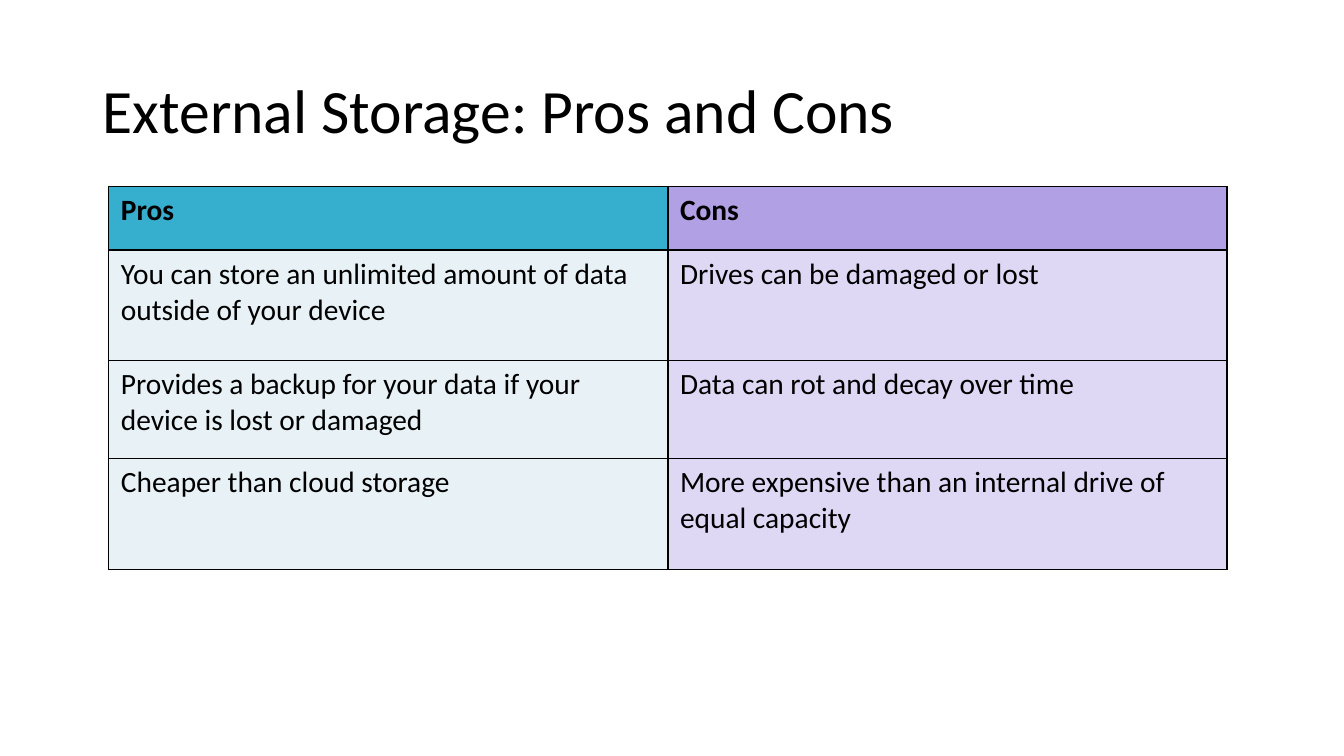
from lxml import etree
from pptx import Presentation
from pptx import util as u
from pptx.dml.color import RGBColor
from pptx.enum import text
from pptx.oxml.ns import qn

W, H = 13.33, 7.5
FONT = "Calibri"
COLORS = {
    "ink": "000000",
    "pros_head": "36AFCE", "pros_body": "E8F2F6",
    "cons_head": "B2A0E4", "cons_body": "DFD8F4",
}
TITLE_BOX = (0.92, 0.4, 11.5, 1.45)
TABLE_BOX = (1.08, 1.85, 11.09, 3.8)
ROW_HEIGHTS = (0.63, 1.1, 0.97, 1.1)
COLUMNS = {
    "pros": ("Pros",
             "You can store an unlimited amount of data outside of your device",
             "Provides a backup for your data if your device is lost or damaged",
             "Cheaper than cloud storage"),
    "cons": ("Cons",
             "Drives can be damaged or lost",
             "Data can rot and decay over time",
             "More expensive than an internal drive of equal capacity"),
}


def write(tf, content, size, bold=False, spacing=None):
    p = tf.paragraphs[0]
    p.line_spacing = spacing
    r = p.add_run()
    r.text = content
    r.font.name, r.font.size, r.font.bold = FONT, u.Pt(size), bold
    r.font.color.rgb = RGBColor.from_string(COLORS["ink"])


def add_borders(cell, width=1):
    """Draw a solid line on all four sides; lines must precede the cell fill."""
    tc_pr = cell._tc.get_or_add_tcPr()
    for i, side in enumerate("LRTB"):
        ln = etree.Element(qn(f"a:ln{side}"), w=str(u.Pt(width)))
        fill = etree.SubElement(ln, qn("a:solidFill"))
        etree.SubElement(fill, qn("a:srgbClr"), val=COLORS["ink"])
        tc_pr.insert(i, ln)


def add_title(s, box, content):
    tf = s.shapes.add_textbox(*map(u.Inches, box)).text_frame
    tf.word_wrap = True
    tf.vertical_anchor = text.MSO_ANCHOR.MIDDLE
    write(tf, content, 44, spacing=0.9)


def add_comparison(s, box, columns, row_heights):
    frame = s.shapes.add_table(len(row_heights), len(columns), *map(u.Inches, box))
    table = frame.table
    table.horz_banding = False
    for row, height in zip(table.rows, row_heights):
        row.height = u.Inches(height)
    for c, (name, entries) in enumerate(columns.items()):
        table.columns[c].width = u.Inches(box[2] / len(columns))
        for r, entry in enumerate(entries):
            cell = table.cell(r, c)
            part = "body" if r else "head"
            cell.margin_left = cell.margin_right = u.Inches(0.12)
            cell.margin_top = cell.margin_bottom = u.Inches(0.06)
            cell.fill.solid()
            cell.fill.fore_color.rgb = RGBColor.from_string(COLORS[f"{name}_{part}"])
            add_borders(cell)
            write(cell.text_frame, entry, 21, bold=r == 0)


def main():
    prs = Presentation()
    prs.slide_width, prs.slide_height = u.Inches(W), u.Inches(H)
    s = prs.slides.add_slide(prs.slide_layouts[6])
    add_title(s, TITLE_BOX, "External Storage: Pros and Cons")
    add_comparison(s, TABLE_BOX, COLUMNS, ROW_HEIGHTS)
    prs.save("out.pptx")


if __name__ == "__main__":
    main()
